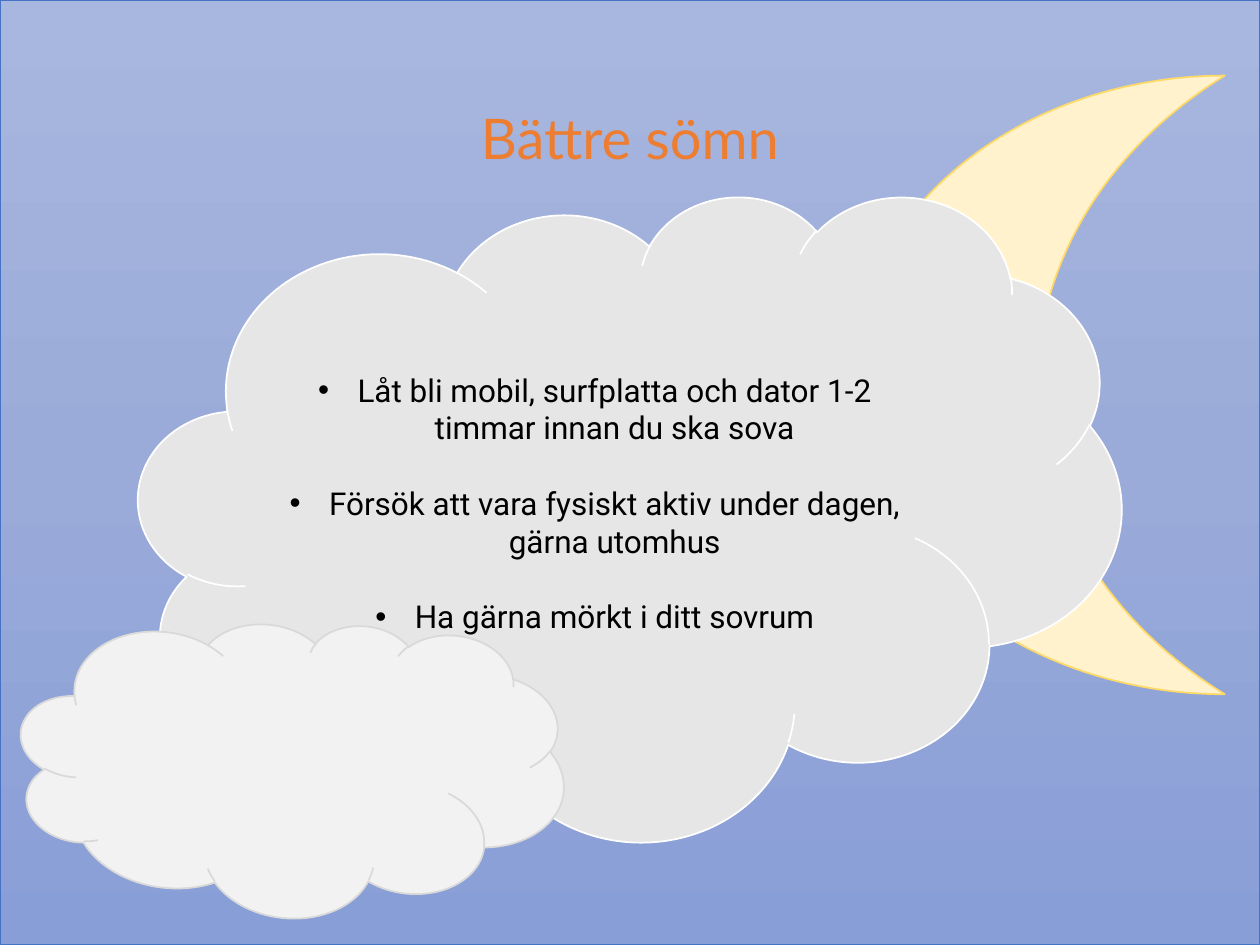
from copy import deepcopy

from lxml import etree
from pptx import Presentation
from pptx.dml.color import RGBColor
from pptx.enum.shapes import MSO_SHAPE
from pptx.enum.text import MSO_ANCHOR, PP_ALIGN
from pptx.oxml.ns import qn
from pptx.util import Pt

RECTANGLE, MOON, CLOUD = MSO_SHAPE.RECTANGLE, MSO_SHAPE.MOON, MSO_SHAPE.CLOUD
MIDDLE, CENTER = MSO_ANCHOR.MIDDLE, PP_ALIGN.CENTER

SKY_TOP = RGBColor(0xA8, 0xB7, 0xDF)
SKY_MIDDLE = RGBColor(0x9A, 0xAB, 0xD9)
SKY_BOTTOM = RGBColor(0x88, 0x9E, 0xD7)
SKY_EDGE = RGBColor(0x44, 0x72, 0xC4)
MOON_FILL = RGBColor(0xFF, 0xF2, 0xCC)
MOON_EDGE = RGBColor(0xFF, 0xD9, 0x66)
GRAY_CLOUD = RGBColor(0xE7, 0xE6, 0xE6)
PALE_CLOUD = RGBColor(0xF2, 0xF2, 0xF2)
PALE_EDGE = RGBColor(0xD9, 0xD9, 0xD9)
WHITE = RGBColor(0xFF, 0xFF, 0xFF)
BLACK = RGBColor(0, 0, 0)
ORANGE = RGBColor(0xED, 0x7D, 0x31)

WIDTH, HEIGHT = 720, 540
TIPS = [
    "Låt bli mobil, surfplatta och dator 1-2 timmar innan du ska sova",
    "Försök att vara fysiskt aktiv under dagen, gärna utomhus",
    "Ha gärna mörkt i ditt sovrum",
]


def add_figure(page, kind, bounds, edge, fill=None, edge_width=1):
    figure = page.shapes.add_shape(kind, *map(Pt, bounds))
    figure.shadow.inherit = False
    figure.line.color.rgb = edge
    figure.line.width = Pt(edge_width)
    if fill is not None:
        figure.fill.solid()
        figure.fill.fore_color.rgb = fill
    return figure


def add_sky(page):
    sky = add_figure(page, RECTANGLE, (0, 0, WIDTH, HEIGHT), SKY_EDGE, edge_width=0.5)
    sky.fill.gradient()
    sky.fill.gradient_angle = 270
    stop_list = sky._element.spPr.find(f".//{qn('a:gsLst')}")
    stop_list.insert(1, deepcopy(stop_list[0]))
    colors = (SKY_TOP, SKY_MIDDLE, SKY_BOTTOM)
    for stop, color, position in zip(sky.fill.gradient_stops, colors, (0, 0.5, 1)):
        stop.color.rgb = color
        stop.position = position


def set_font(para, name, size, color):
    para.font.name = name
    para.font.size = Pt(size)
    para.font.color.rgb = color


def add_bullet(para, indent):
    properties = para._p.get_or_add_pPr()
    properties.set("marL", str(Pt(indent)))
    properties.set("indent", str(-Pt(indent)))
    etree.SubElement(properties, qn("a:buFont"), typeface="Arial")
    etree.SubElement(properties, qn("a:buChar"), char="•")


def add_title(page, text, bounds):
    box = page.shapes.add_textbox(*map(Pt, bounds))
    frame = box.text_frame
    frame.word_wrap = True
    frame.vertical_anchor = MIDDLE
    para = frame.paragraphs[0]
    para.text = text
    para.alignment = CENTER
    para.line_spacing = 0.9
    set_font(para, "Lato", 32, ORANGE)


def write_tips(cloud, tips):
    frame = cloud.text_frame
    frame.word_wrap = True
    frame.vertical_anchor = MIDDLE
    for number, tip in enumerate(tips):
        para = frame.add_paragraph() if number else frame.paragraphs[0]
        para.text = tip
        para.alignment = CENTER
        if number:
            para.space_before = Pt(21.6)
        add_bullet(para, 22.5)
        set_font(para, "Roboto", 18, BLACK)


def main():
    deck = Presentation()
    deck.slide_width, deck.slide_height = Pt(WIDTH), Pt(HEIGHT)
    page = deck.slides.add_slide(deck.slide_layouts[6])

    add_sky(page)
    add_figure(page, MOON, (485.3, 43.2, 214.6, 353.5), MOON_EDGE, MOON_FILL)
    tip_cloud = add_figure(page, CLOUD, (79.2, 111.6, 561.6, 368.6), WHITE, GRAY_CLOUD)
    write_tips(tip_cloud, TIPS)
    add_title(page, "Bättre sömn", (49.7, 28.8, 620.6, 104.4))
    small_cloud = add_figure(page, CLOUD, (10.8, 353.5, 311.8, 170.6), PALE_EDGE, PALE_CLOUD)
    small_cloud.rotation = 5.9

    deck.save("out.pptx")


if __name__ == "__main__":
    main()
